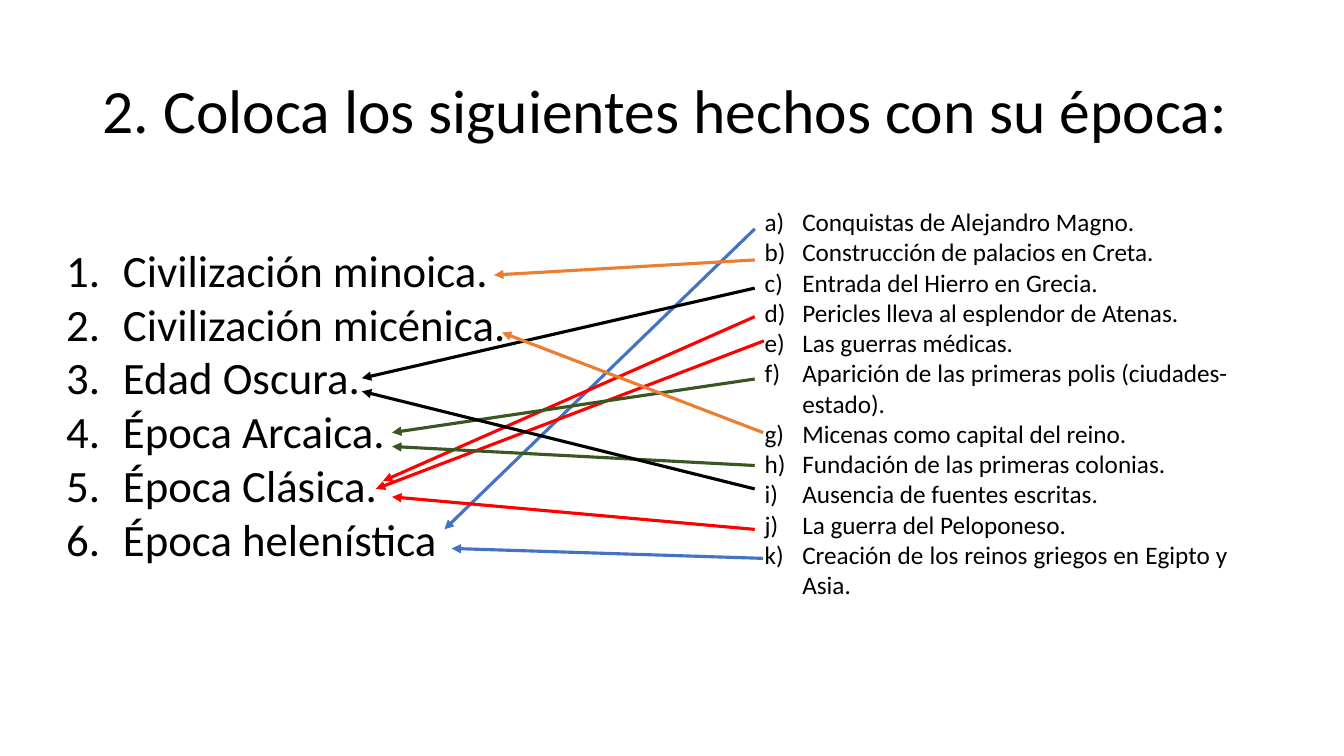
from lxml import etree
from pptx import Presentation
from pptx.dml.color import RGBColor
from pptx.enum.shapes import MSO_CONNECTOR
from pptx.enum.text import MSO_ANCHOR, MSO_AUTO_SIZE, PP_ALIGN
from pptx.oxml.ns import qn
from pptx.util import Cm, Pt

STRAIGHT = MSO_CONNECTOR.STRAIGHT
TOP, MIDDLE = MSO_ANCHOR.TOP, MSO_ANCHOR.MIDDLE
JUSTIFY = PP_ALIGN.JUSTIFY
GROW, FIXED = MSO_AUTO_SIZE.SHAPE_TO_FIT_TEXT, MSO_AUTO_SIZE.NONE

BLACK = RGBColor(0x00, 0x00, 0x00)
BLUE = RGBColor(0x44, 0x72, 0xC4)
ORANGE = RGBColor(0xED, 0x7D, 0x31)
RED = RGBColor(0xFF, 0x00, 0x00)
GREEN = RGBColor(0x38, 0x57, 0x23)

prs = Presentation()
prs.slide_width, prs.slide_height = Cm(33.87), Cm(19.05)
s = prs.slides.add_slide(prs.slide_layouts[6])


def add_text(lines, x, y, w, h, size, anchor=TOP, fit=FIXED, spacing=1.0,
             numbering=None, indent=0):
    tf = s.shapes.add_textbox(Cm(x), Cm(y), Cm(w), Cm(h)).text_frame
    tf.word_wrap = True
    tf.auto_size = fit
    tf.vertical_anchor = anchor
    for i, line in enumerate(lines):
        p = tf.add_paragraph() if i else tf.paragraphs[0]
        p.alignment = JUSTIFY
        p.line_spacing = spacing
        r = p.add_run()
        r.text = line
        r.font.name, r.font.size = "Calibri", Pt(size)
        r.font.color.rgb = BLACK
        if numbering:
            pPr = p._p.get_or_add_pPr()
            pPr.set("marL", str(Cm(indent)))
            pPr.set("indent", str(-Cm(indent)))
            etree.SubElement(pPr, qn("a:buFont"), typeface="+mj-lt")
            etree.SubElement(pPr, qn("a:buAutoNum"), type=numbering)


# Title
add_text(["2. Coloca los siguientes hechos con su época:"],
         2.34, 1.02, 29.21, 3.68, 44, anchor=MIDDLE, spacing=0.9)

# Periods
periods = [
    "Civilización minoica.",
    "Civilización micénica.",
    "Edad Oscura.",
    "Época Arcaica.",
    "Época Clásica.",
    "Época helenística",
]
add_text(periods, 1.42, 5.99, 12.9, 8.46, 32, fit=GROW,
         numbering="arabicPeriod", indent=1.43)

# Events
events = [
    "Conquistas de Alejandro Magno.",
    "Construcción de palacios en Creta.",
    "Entrada del Hierro en Grecia.",
    "Pericles lleva al esplendor de Atenas.",
    "Las guerras médicas.",
    "Aparición de las primeras polis (ciudades-estado).",
    "Micenas como capital del reino.",
    "Fundación de las primeras colonias.",
    "Ausencia de fuentes escritas.",
    "La guerra del Peloponeso.",
    "Creación de los reinos griegos en Egipto y Asia.",
]
add_text(events, 19.02, 5.08, 12.17, 10.26, 18, fit=GROW,
         numbering="alphaLcParenR", indent=0.95)

# Arrows from each event (a to k) to its period
arrows = [
    (19.02, 5.77, 11.2, 13.34, BLUE),
    (19.02, 6.55, 12.45, 6.93, ORANGE),
    (19.02, 7.26, 9.12, 9.53, BLACK),
    (19.02, 7.98, 9.65, 12.12, RED),
    (19.25, 8.59, 9.47, 12.32, RED),
    (19.02, 9.55, 9.88, 10.9, GREEN),
    (19.23, 10.9, 12.65, 8.38, ORANGE),
    (19.02, 11.73, 9.88, 11.25, GREEN),
    (19.02, 12.32, 9.12, 9.86, BLACK),
    (19.02, 13.34, 9.88, 12.52, RED),
    (19.23, 14.07, 11.38, 13.82, BLUE),
]
for x1, y1, x2, y2, color in arrows:
    arrow = s.shapes.add_connector(STRAIGHT, Cm(x1), Cm(y1), Cm(x2), Cm(y2))
    arrow.line.color.rgb = color
    arrow.line.width = Pt(2.25)
    etree.SubElement(arrow.line._get_or_add_ln(), qn("a:tailEnd"), type="triangle")
    etree.SubElement(arrow._element.spPr, qn("a:effectLst"))

prs.save("out.pptx")
